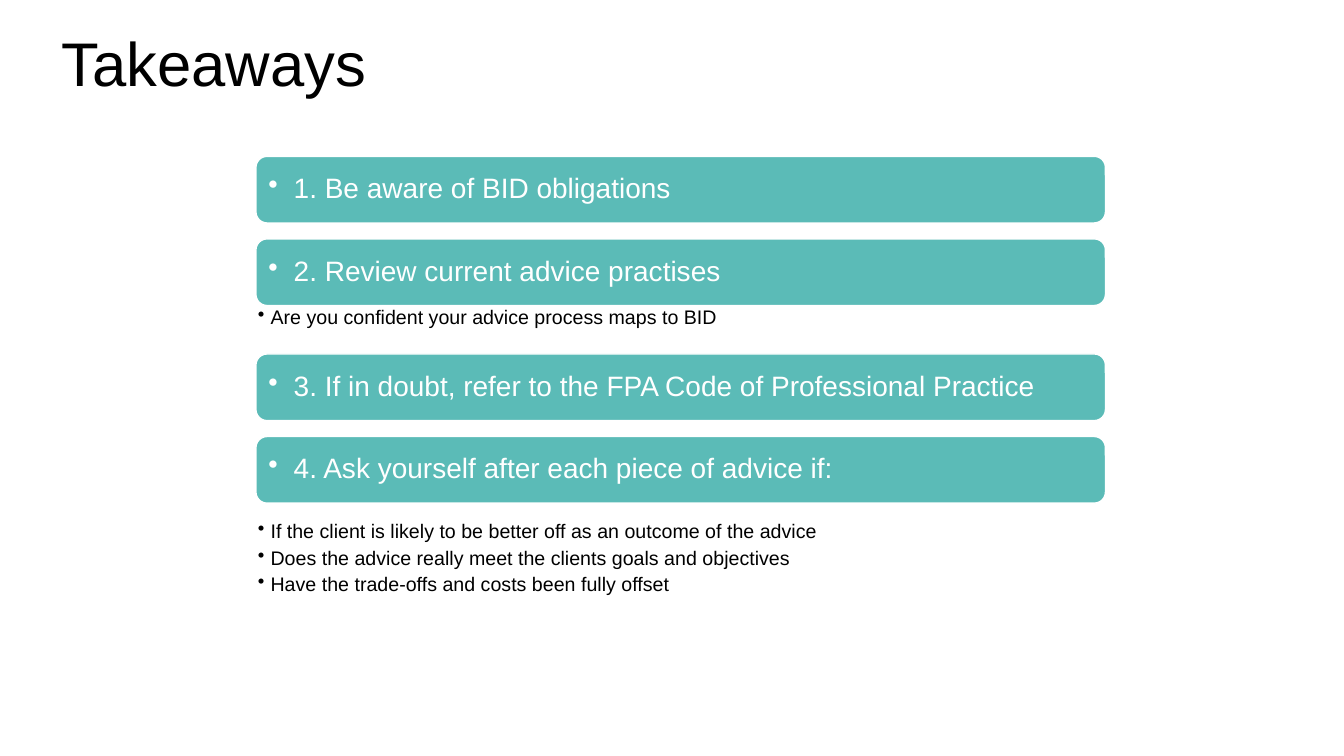
from dataclasses import dataclass

import lxml.etree
import pptx
import pptx.dml.color
import pptx.enum.shapes
import pptx.enum.text
import pptx.oxml.ns
import pptx.presentation
import pptx.shapes.autoshape
import pptx.slide
import pptx.text.text
import pptx.util
from pptx.util import Cm


@dataclass(frozen=True)
class Theme:
    font: str = "Arial"
    teal: str = "5BBBB7"
    white: str = "FFFFFF"
    black: str = "000000"
    title_size: int = 44
    takeaway_size: int = 20
    detail_size: int = 14
    detail_spacing: float = 3.7


@dataclass(frozen=True)
class Takeaway:
    heading: str
    room_below: float = 0.4
    details: tuple[str, ...] = ()
    detail_offset: float = 0


THEME = Theme()
LIST_LEFT, LIST_TOP, LIST_WIDTH = 6.45, 3.94, 21.41
BAR_HEIGHT = 1.68
DETAIL_LINE_HEIGHT = 0.64

TAKEAWAYS = (
    Takeaway("1. Be aware of BID obligations"),
    Takeaway(
        "2. Review current advice practises",
        room_below=1.22,
        details=("Are you confident your advice process maps to BID",),
    ),
    Takeaway("3. If in doubt, refer to the FPA Code of Professional Practice"),
    Takeaway(
        "4. Ask yourself after each piece of advice if:",
        details=(
            "If the client is likely to be better off as an outcome of the advice",
            "Does the advice really meet the clients goals and objectives",
            "Have the trade-offs and costs been fully offset",
        ),
        detail_offset=0.42,
    ),
)


def rgb(colour: str) -> pptx.dml.color.RGBColor:
    return pptx.dml.color.RGBColor.from_string(colour)


def set_frame(
    frame: pptx.text.text.TextFrame,
    side_inset: float,
    end_inset: float,
    anchor: pptx.enum.text.MSO_ANCHOR,
) -> None:
    frame.word_wrap = True
    frame.margin_left = frame.margin_right = Cm(side_inset)
    frame.margin_top = frame.margin_bottom = Cm(end_inset)
    frame.vertical_anchor = anchor


def write_line(
    line: pptx.text.text._Paragraph, wording: str, size: int, colour: str, hang: float = 0
) -> None:
    if hang:
        properties = line._p.get_or_add_pPr()
        properties.set("marL", str(Cm(hang)))
        properties.set("indent", str(-Cm(hang)))
        bullet = lxml.etree.SubElement(properties, pptx.oxml.ns.qn("a:buChar"))
        bullet.set("char", "•")
    line.alignment = pptx.enum.text.PP_ALIGN.LEFT
    line.line_spacing = 0.9
    run = line.add_run()
    run.text = wording
    run.font.name = THEME.font
    run.font.size = pptx.util.Pt(size)
    run.font.color.rgb = rgb(colour)


def draw_title(slide: pptx.slide.Slide, wording: str) -> None:
    title = slide.shapes.add_textbox(Cm(1.42), Cm(-0.15), Cm(29.21), Cm(3.68))
    set_frame(title.text_frame, 0.13, 0.13, pptx.enum.text.MSO_ANCHOR.MIDDLE)
    write_line(title.text_frame.paragraphs[0], wording, THEME.title_size, THEME.black)


def draw_bar(slide: pptx.slide.Slide, heading: str, top: float) -> None:
    bar = slide.shapes.add_shape(
        pptx.enum.shapes.MSO_SHAPE.ROUNDED_RECTANGLE,
        Cm(LIST_LEFT), Cm(top), Cm(LIST_WIDTH), Cm(BAR_HEIGHT),
    )
    bar.shadow.inherit = False
    bar.fill.solid()
    bar.fill.fore_color.rgb = rgb(THEME.teal)
    bar.line.color.rgb = rgb(THEME.white)
    bar.line.width = pptx.util.Pt(1)
    set_frame(bar.text_frame, 0.23, 0.2, pptx.enum.text.MSO_ANCHOR.MIDDLE)
    write_line(
        bar.text_frame.paragraphs[0], heading, THEME.takeaway_size, THEME.white, hang=0.64
    )


def draw_details(slide: pptx.slide.Slide, details: tuple[str, ...], top: float) -> None:
    points = slide.shapes.add_textbox(
        Cm(LIST_LEFT), Cm(top), Cm(LIST_WIDTH), Cm(DETAIL_LINE_HEIGHT * len(details))
    )
    frame = points.text_frame
    set_frame(frame, 0.05, 0.05, pptx.enum.text.MSO_ANCHOR.TOP)
    for index, detail in enumerate(details):
        line = frame.add_paragraph() if index else frame.paragraphs[0]
        write_line(line, detail, THEME.detail_size, THEME.black, hang=0.32)
        if index:
            line.space_before = pptx.util.Pt(THEME.detail_spacing)


def main() -> None:
    deck: pptx.presentation.Presentation = pptx.Presentation()
    deck.slide_width, deck.slide_height = Cm(33.87), Cm(19.05)
    slide = deck.slides.add_slide(deck.slide_layouts[6])
    draw_title(slide, "Takeaways")
    top = LIST_TOP
    for takeaway in TAKEAWAYS:
        draw_bar(slide, takeaway.heading, top)
        bar_bottom = top + BAR_HEIGHT
        if takeaway.details:
            draw_details(slide, takeaway.details, bar_bottom + takeaway.detail_offset)
        top = bar_bottom + takeaway.room_below
    deck.save("out.pptx")


if __name__ == "__main__":
    main()
